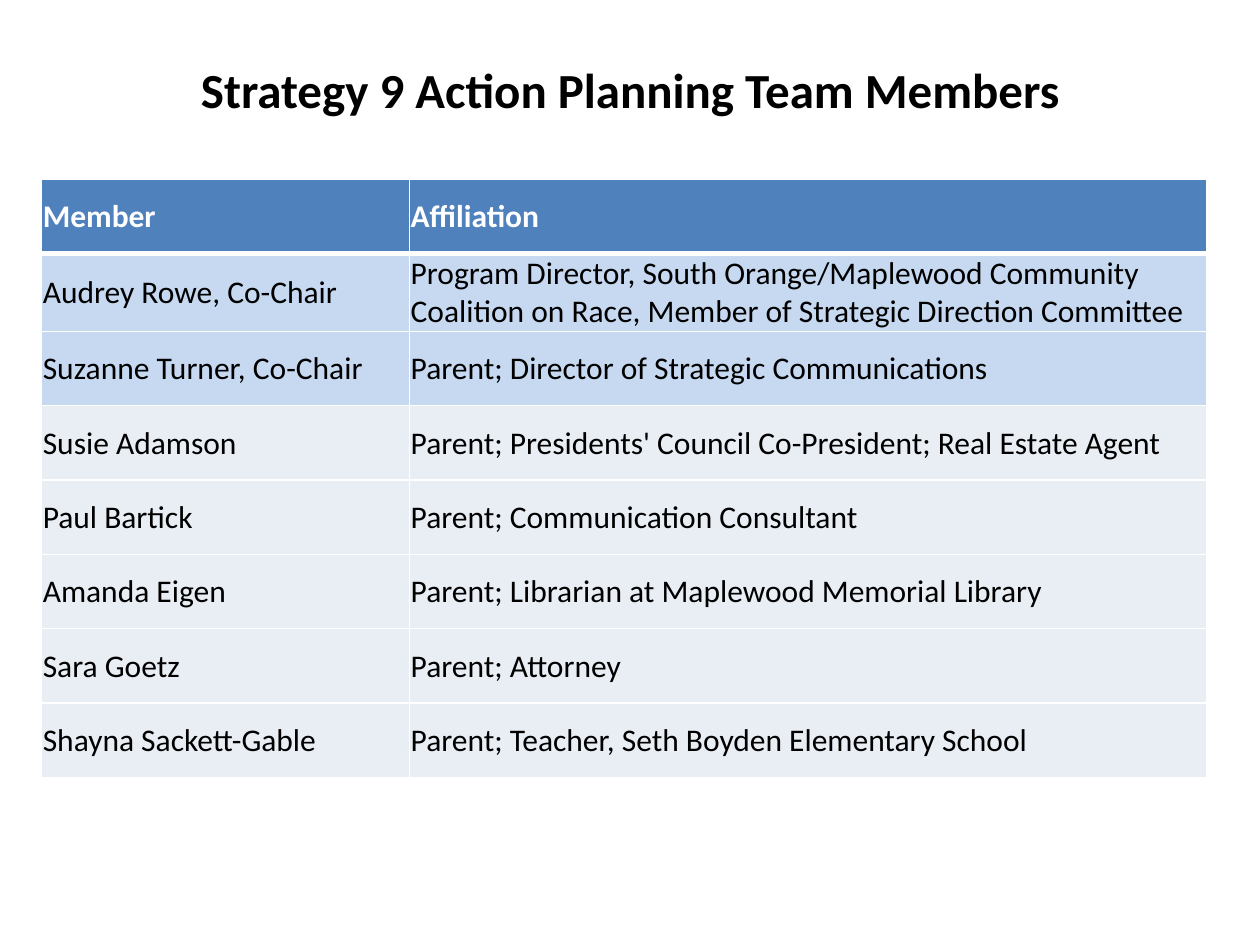
from lxml.etree import SubElement
from pptx import Presentation
from pptx.dml.color import RGBColor
from pptx.enum.text import MSO_ANCHOR, PP_ALIGN
from pptx.oxml.ns import qn
from pptx.util import Inches, Pt

COLORS = {
    "text": "000000",
    "header": "4F81BD",
    "header_text": "FFFFFF",
    "chair": "C6D9F1",
    "member": "E9EDF4",
    "border": "FFFFFF",
}

TITLE_FONT = {"name": "Calibri", "size": Pt(28), "bold": True}
HEADER_FONT = {"name": "Calibri", "size": Pt(18), "bold": True}
BODY_FONT = {"name": "Calibri", "size": Pt(18), "bold": False}
CELL_FORMAT = {
    "vertical_anchor": MSO_ANCHOR.MIDDLE,
    "margin_left": Inches(0.01),
    "margin_top": Inches(0.01),
    "margin_right": Inches(0.01),
    "margin_bottom": 0,
}

TEAM = [
    ("Member", "Affiliation"),
    ("Audrey Rowe, Co-Chair",
     "Program Director, South Orange/Maplewood Community Coalition on Race, "
     "Member of Strategic Direction Committee"),
    ("Suzanne Turner, Co-Chair", "Parent; Director of Strategic Communications"),
    ("Susie Adamson", "Parent; Presidents' Council Co-President; Real Estate Agent"),
    ("Paul Bartick", "Parent; Communication Consultant"),
    ("Amanda Eigen", "Parent; Librarian at Maplewood Memorial Library"),
    ("Sara Goetz", "Parent; Attorney"),
    ("Shayna Sackett-Gable", "Parent; Teacher, Seth Boyden Elementary School"),
]
MEMBER_SHARE = 2.92 / 9.25


def apply(target, values):
    for name, value in values.items():
        setattr(target, name, value)


def style_font(font, values, color):
    apply(font, values)
    font.color.rgb = RGBColor.from_string(COLORS[color])


def add_borders(cell, bottom_width):
    properties = cell._tc.get_or_add_tcPr()
    widths = {"a:lnL": Pt(1), "a:lnR": Pt(1), "a:lnT": Pt(1), "a:lnB": bottom_width}
    for side, width in widths.items():
        line = SubElement(properties, qn(side), w=str(width))
        fill = SubElement(line, qn("a:solidFill"))
        SubElement(fill, qn("a:srgbClr"), val=COLORS["border"])


def place_title(slide, left, top, width, height):
    title = slide.shapes.title
    apply(title, {"left": left, "top": top, "width": width, "height": height})
    frame = title.text_frame
    frame.text = "Strategy 9 Action Planning Team Members"
    apply(frame, {"word_wrap": True, "vertical_anchor": MSO_ANCHOR.MIDDLE})
    heading = frame.paragraphs[0]
    heading.alignment = PP_ALIGN.CENTER
    style_font(heading.font, TITLE_FONT, "text")


def fill_cell(cell, text, is_header, fill):
    cell.text = text
    apply(cell, CELL_FORMAT)
    add_borders(cell, Pt(3) if is_header else Pt(1))
    cell.fill.solid()
    cell.fill.fore_color.rgb = RGBColor.from_string(COLORS[fill])
    font = cell.text_frame.paragraphs[0].font
    if is_header:
        style_font(font, HEADER_FONT, "header_text")
    else:
        style_font(font, BODY_FONT, "text")


def place_team_table(slide, left, top, width, height):
    roster = slide.shapes.add_table(len(TEAM), 2, left, top, width, height).table
    member_width = round(width * MEMBER_SHARE)
    roster.columns[0].width = member_width
    roster.columns[1].width = width - member_width

    for row, entry in enumerate(TEAM):
        is_header = row == 0
        # Co-chairs stand out from the other members
        is_chair = entry[0].endswith("Co-Chair")
        fill = "header" if is_header else "chair" if is_chair else "member"
        for column, text in enumerate(entry):
            fill_cell(roster.cell(row, column), text, is_header, fill)


def main():
    deck = Presentation()
    deck.slide_width, deck.slide_height = Inches(10), Inches(7.5)
    slide = deck.slides.add_slide(deck.slide_layouts[5])

    # Title
    place_title(slide, Inches(0.79), Inches(0.42), Inches(8.42), Inches(0.57))
    # Team members
    place_team_table(slide, Inches(0.33), Inches(1.42), Inches(9.25), Inches(4.72))

    deck.save("out.pptx")


if __name__ == "__main__":
    main()
